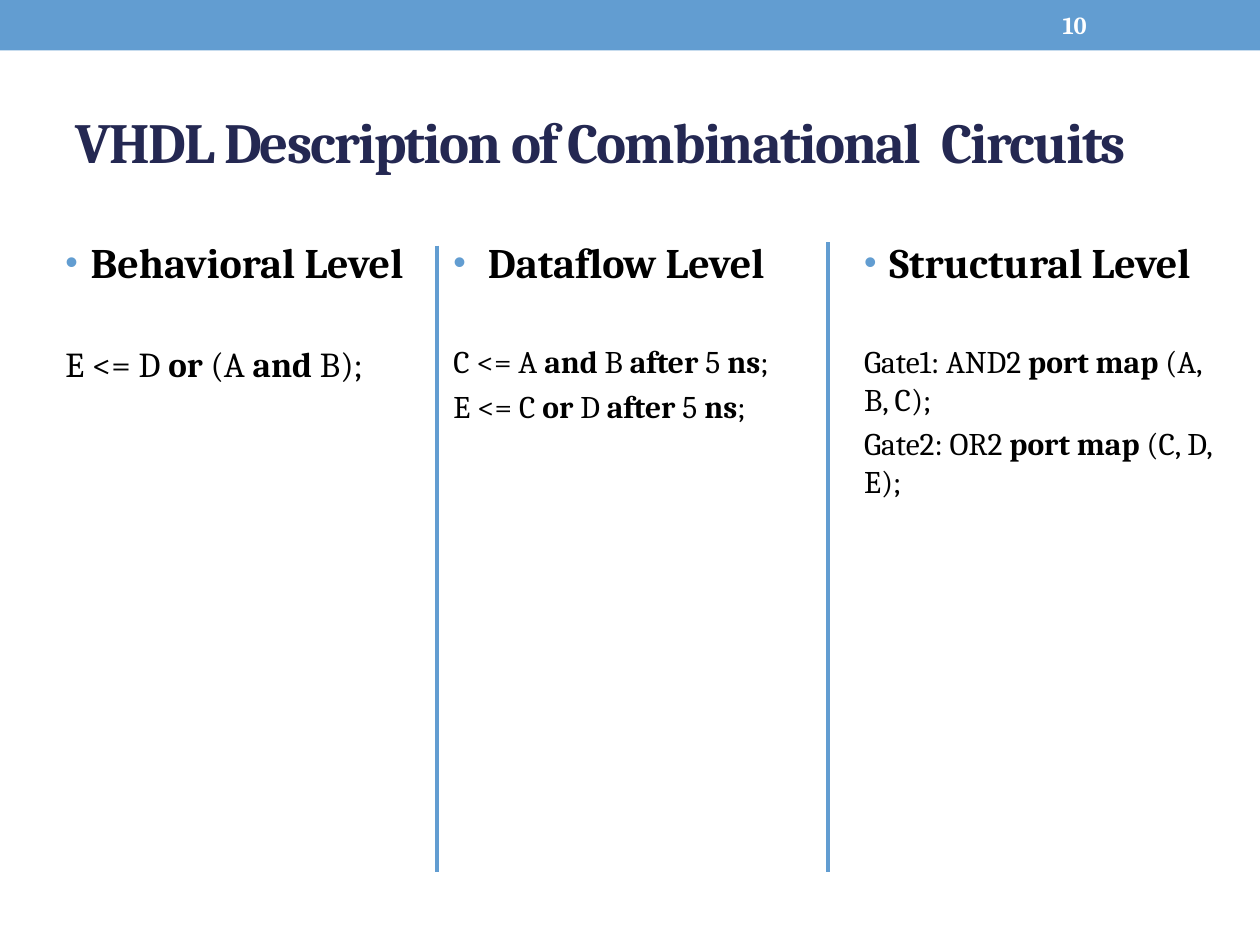
from lxml.etree import SubElement
from pptx import Presentation
from pptx.dml.color import RGBColor
from pptx.enum.shapes import MSO_CONNECTOR, MSO_SHAPE
from pptx.enum.text import MSO_ANCHOR
from pptx.oxml.ns import qn
from pptx.util import Cm, Pt

FONT = "Cambria"
BLUE, NAVY, BLACK, WHITE = "629DD1", "242852", "000000", "FFFFFF"
TITLE = "VHDL Description of Combinational  Circuits"
PAGE = "10"
COLS = [
    (1.07, "Behavioral Level", 20, 9.07, ["E <= D *or* (A *and* B);"]),
    (8.89, " Dataflow Level", 18, 9.07,
     ["C <= A *and* B *after* 5 *ns*;", "E <= C *or* D *after* 5 *ns*;"]),
    (17.17, "Structural Level", 18, 10.97,
     ["Gate1: AND2 *port map* (A, B, C);", "Gate2: OR2 *port map* (C, D, E);"]),
]
RULES = [(16.69, 4.88), (8.81, 4.95)]
WIDE, HEAD, CODE, FOOT = 7.8, 4.65, 6.78, 17.58


def color(code):
    return RGBColor.from_string(code)


def add_text(slide, box, lines, size, tint=BLACK, bold=False, gap=0, mid=False):
    frame = slide.shapes.add_textbox(*map(Cm, box)).text_frame
    frame.word_wrap = True
    frame.vertical_anchor = MSO_ANCHOR.MIDDLE if mid else MSO_ANCHOR.TOP
    for i, line in enumerate(lines):
        para = frame.add_paragraph() if i else frame.paragraphs[0]
        para.font.name, para.font.size = FONT, Pt(size)
        para.font.color.rgb = color(tint)
        para.font.bold = bold
        para.space_before = Pt(size * gap)
        for j, part in enumerate(line.split("*")):
            run = para.add_run()
            run.text = part
            if j % 2:
                run.font.bold = True
    return frame.paragraphs[0]


def add_dot(para):
    props = para._p.get_or_add_pPr()
    props.set("marL", str(Cm(0.51)))
    props.set("indent", str(-Cm(0.51)))
    dot = [
        SubElement(props, qn("a:buClr")),
        SubElement(props, qn("a:buSzPct"), val="85000"),
        SubElement(props, qn("a:buFont"), typeface="Arial"),
        SubElement(props, qn("a:buChar"), char="•"),
    ]
    SubElement(dot[0], qn("a:srgbClr"), val=BLUE)
    last = props.find(qn("a:defRPr"))
    for node in dot:
        last.addprevious(node)


def add_rule(slide, x, top):
    rule = slide.shapes.add_connector(
        MSO_CONNECTOR.STRAIGHT, Cm(x), Cm(top), Cm(x), Cm(FOOT))
    rule.line.color.rgb = color(BLUE)
    rule.line.width = Pt(2.25)
    SubElement(rule._element.spPr, qn("a:effectLst"))


def main():
    deck = Presentation()
    deck.slide_width, deck.slide_height = Cm(25.4), Cm(19.05)
    slide = deck.slides.add_slide(deck.slide_layouts[6])

    band = slide.shapes.add_shape(
        MSO_SHAPE.RECTANGLE, 0, 0, deck.slide_width, Cm(1.02))
    band.shadow.inherit = False
    band.fill.solid()
    band.fill.fore_color.rgb = color(BLUE)
    band.line.fill.background()

    title = add_text(slide, (1.27, 1.47, 22.86, 2.74), [TITLE], 32.4, NAVY, True, mid=True)
    title.runs[0].font._element.set("spc", "-100")
    add_text(slide, (21.17, 0.05, 2.96, 0.91), [PAGE], 14, WHITE, True, mid=True)

    for x, name, size, high, code in COLS:
        add_dot(add_text(slide, (x, HEAD, WIDE, 1.78), [name], 24, bold=True, gap=0.2))
        add_text(slide, (x, CODE, WIDE, high), code, size, gap=0.2)
    for x, top in RULES:
        add_rule(slide, x, top)
    deck.save("out.pptx")


if __name__ == "__main__":
    main()
